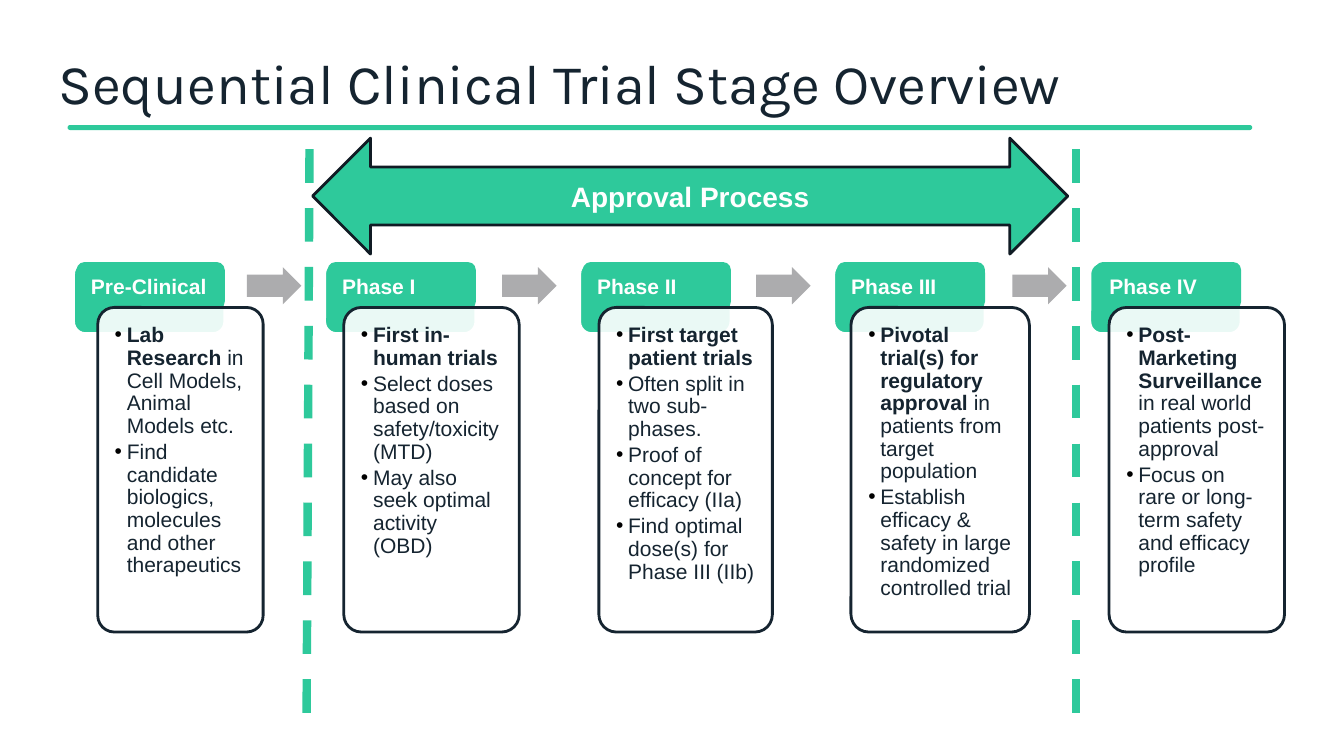
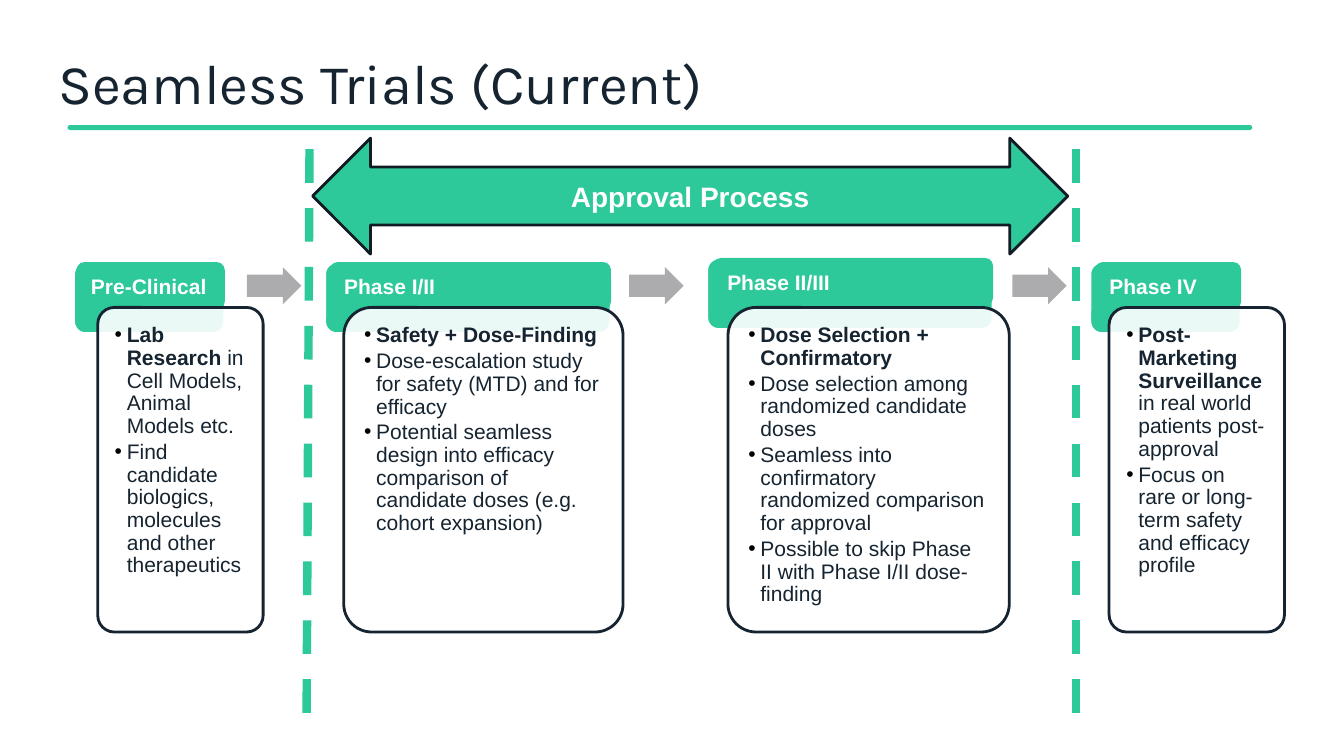
from dataclasses import dataclass

from lxml import etree
from pptx import Presentation
from pptx.dml.color import RGBColor
from pptx.enum.dml import MSO_LINE
from pptx.enum.shapes import MSO_CONNECTOR, MSO_SHAPE
from pptx.enum.text import MSO_ANCHOR, PP_ALIGN
from pptx.oxml.ns import qn
from pptx.util import Inches, Pt

GREEN = RGBColor(0x2E, 0xC9, 0x9B)
NAVY = RGBColor(0x15, 0x24, 0x30)
ARROW_EDGE = RGBColor(0x10, 0x1B, 0x24)
GRAY = RGBColor(0xAC, 0xAC, 0xAE)
WHITE = RGBColor(0xFF, 0xFF, 0xFF)

ROUNDED = MSO_SHAPE.ROUNDED_RECTANGLE
RIGHT_ARROW = MSO_SHAPE.RIGHT_ARROW
DOUBLE_ARROW = MSO_SHAPE.LEFT_RIGHT_ARROW
STRAIGHT = MSO_CONNECTOR.STRAIGHT
DASH = MSO_LINE.DASH
TOP, MIDDLE, BOTTOM = MSO_ANCHOR.TOP, MSO_ANCHOR.MIDDLE, MSO_ANCHOR.BOTTOM
LEFT, CENTER = PP_ALIGN.LEFT, PP_ALIGN.CENTER

TAB_TOP, TAB_HEIGHT, LABEL_HEIGHT = 2.6, 0.71, 0.47
CARD_TOP, CARD_HEIGHT = 3.05, 3.22
CARD_ROUNDING = 0.1
STEP_WIDTH, STEP_HEIGHT, STEP_GAP = 0.54, 0.37, 0.23


@dataclass
class Stage:
    name: str
    tab_left: float
    tab_width: float
    card_left: float
    card_width: float
    lead: str
    lead_detail: str
    points: list
    label_indent: float = 0.03
    tab_top: float = TAB_TOP


PRE_CLINICAL = Stage(
    "Pre-Clinical", 0.73, 1.5, 0.97, 1.64,
    "Lab Research ", "in Cell Models, Animal Models etc.",
    ["Find candidate biologics, molecules and other therapeutics"])
PHASE_4 = Stage(
    "Phase IV", 10.81, 1.5, 11, 1.74,
    "Post-Marketing Surveillance ", "in real world patients post-approval",
    ["Focus on rare or long-term safety and efficacy profile"],
    label_indent=0.05)

SEQUENTIAL = [
    PRE_CLINICAL,
    Stage("Phase I", 3.22, 1.5, 3.41, 1.74, "First in-human trials", "",
          ["Select doses based on safety/toxicity (MTD)",
           "May also seek optimal activity (OBD)"]),
    Stage("Phase II", 5.75, 1.5, 5.94, 1.72, "First target patient trials", "",
          ["Often split in two sub-phases.",
           "Proof of concept for efficacy (IIa)",
           "Find optimal dose(s) for Phase III (IIb)"]),
    Stage("Phase III", 8.27, 1.5, 8.44, 1.77,
          "Pivotal trial(s) for regulatory approval ",
          "in patients from target population",
          ["Establish efficacy & safety in large randomized controlled trial"]),
    PHASE_4,
]
SEAMLESS = [
    PRE_CLINICAL,
    Stage("Phase I/II", 3.22, 2.84, 3.41, 2.77, "Safety + Dose-Finding", "",
          ["Dose-escalation study for safety (MTD) and for efficacy",
           "Potential seamless design into efficacy comparison of candidate "
           "doses (e.g. cohort expansion)"],
          label_indent=0.05),
    Stage("Phase II/III", 7.01, 2.84, 7.22, 2.79,
          "Dose Selection + Confirmatory", "",
          ["Dose selection among randomized candidate doses",
           "Seamless into confirmatory randomized comparison for approval",
           "Possible to skip Phase II with Phase I/II dose-finding"],
          label_indent=0.06, tab_top=2.56),
    PHASE_4,
]


def add_bullet(paragraph):
    props = paragraph._p.get_or_add_pPr()
    props.set("marL", str(Inches(0.12)))
    props.set("indent", str(-Inches(0.12)))
    color = etree.SubElement(props, qn("a:buClr"))
    etree.SubElement(color, qn("a:srgbClr")).set("val", "000000")
    etree.SubElement(props, qn("a:buFont")).set("typeface", "Arial")
    etree.SubElement(props, qn("a:buChar")).set("char", "•")


def write_text(shape, paragraphs, *, size, color, font="Arial", align=LEFT,
               anchor=TOP, insets=(0.1, 0.05, 0.1, 0.05), line_spacing=0.9,
               space_after=0, bullet=False):
    """Fill a shape with paragraphs, each a list of (text, bold) runs."""
    frame = shape.text_frame
    frame.word_wrap = True
    frame.vertical_anchor = anchor
    (frame.margin_left, frame.margin_top,
     frame.margin_right, frame.margin_bottom) = map(Inches, insets)
    for index, runs in enumerate(paragraphs):
        paragraph = frame.add_paragraph() if index else frame.paragraphs[0]
        if bullet:
            add_bullet(paragraph)
        paragraph.alignment = align
        paragraph.line_spacing = line_spacing
        paragraph.space_after = Pt(space_after)
        for text, bold in runs:
            run = paragraph.add_run()
            run.text = text
            run.font.name = font
            run.font.size = Pt(size)
            run.font.bold = bold
            run.font.color.rgb = color


def add_panel(slide, kind, left, top, width, height, fill, *, edge=None,
              adjustments=()):
    panel = slide.shapes.add_shape(kind, Inches(left), Inches(top),
                                   Inches(width), Inches(height))
    panel.shadow.inherit = False
    panel.fill.solid()
    panel.fill.fore_color.rgb = fill
    if edge is None:
        panel.line.fill.background()
    else:
        panel.line.color.rgb = edge
        panel.line.width = Pt(2)
    for index, value in enumerate(adjustments):
        panel.adjustments[index] = value
    return panel


def add_title(slide, text):
    add_panel(slide, ROUNDED, 0.67, 1.24, 11.75, 0.05, GREEN,
              adjustments=[0.5])
    title = slide.shapes.add_textbox(Inches(0.58), Inches(0.38),
                                     Inches(12.16), Inches(0.78))
    write_text(title, [[(text, False)]], size=40, color=NAVY, font="Karla",
               anchor=BOTTOM, insets=(0, 0, 0, 0))


def add_stage_tab(slide, stage):
    add_panel(slide, ROUNDED, stage.tab_left, stage.tab_top, stage.tab_width,
              TAB_HEIGHT, GREEN, edge=WHITE)
    label = add_panel(slide, ROUNDED, stage.tab_left + stage.label_indent,
                      stage.tab_top, stage.tab_width - stage.label_indent,
                      LABEL_HEIGHT, GREEN)
    write_text(label, [[(stage.name, True)]], size=15, color=WHITE,
               insets=(0.12, 0.12, 0.12, 0.06))


def add_stage_card(slide, stage):
    card = add_panel(slide, ROUNDED, stage.card_left, CARD_TOP,
                     stage.card_width, CARD_HEIGHT, WHITE, edge=NAVY,
                     adjustments=[CARD_ROUNDING])
    solid = card._element.spPr.find(qn("a:solidFill"))
    etree.SubElement(solid[0], qn("a:alpha")).set("val", "90000")

    # Rounded corners push text inward; offset that so all cards start level.
    corner = 0.29 * CARD_ROUNDING * stage.card_width
    lead = [(stage.lead, True)]
    if stage.lead_detail:
        lead.append((stage.lead_detail, False))
    write_text(card, [lead] + [[(point, False)] for point in stage.points],
               size=15, color=NAVY, space_after=2.25, bullet=True,
               insets=(0.12, 0.17 - corner, 0.12, 0.12))


def add_step_arrow(slide, next_stage):
    add_panel(slide, RIGHT_ARROW,
              next_stage.tab_left - STEP_GAP - STEP_WIDTH, 2.65,
              STEP_WIDTH, STEP_HEIGHT, GRAY, adjustments=[0.6, 0.5])


def add_approval_span(slide):
    """Draw the double arrow and the dashed borders of the approval process."""
    span = add_panel(slide, DOUBLE_ARROW, 3.1, 1.37, 7.49, 1.15, GREEN,
                     edge=ARROW_EDGE)
    write_text(span, [[("Approval Process", True)]], size=20, color=WHITE,
               align=CENTER, anchor=MIDDLE, line_spacing=1.0)
    for top_x, bottom_x in ((3.07, 3.04), (10.67, 10.67)):
        border = slide.shapes.add_connector(
            STRAIGHT, Inches(top_x), Inches(1.48),
            Inches(bottom_x), Inches(7.29))
        border.line.color.rgb = GREEN
        border.line.width = Pt(6)
        border.line.dash_style = DASH
        etree.SubElement(border._element.spPr, qn("a:effectLst"))


def add_stage_slide(deck, title, stages):
    slide = deck.slides.add_slide(deck.slide_layouts[6])
    add_title(slide, title)
    for stage in stages:
        add_stage_tab(slide, stage)
        add_stage_card(slide, stage)
    for next_stage in stages[1:]:
        add_step_arrow(slide, next_stage)
    add_approval_span(slide)


def main():
    deck = Presentation()
    deck.slide_width = Inches(13.33)
    deck.slide_height = Inches(7.5)
    add_stage_slide(deck, "Sequential Clinical Trial Stage Overview",
                    SEQUENTIAL)
    add_stage_slide(deck, "Seamless Trials (Current)", SEAMLESS)
    deck.save("out.pptx")


if __name__ == "__main__":
    main()
